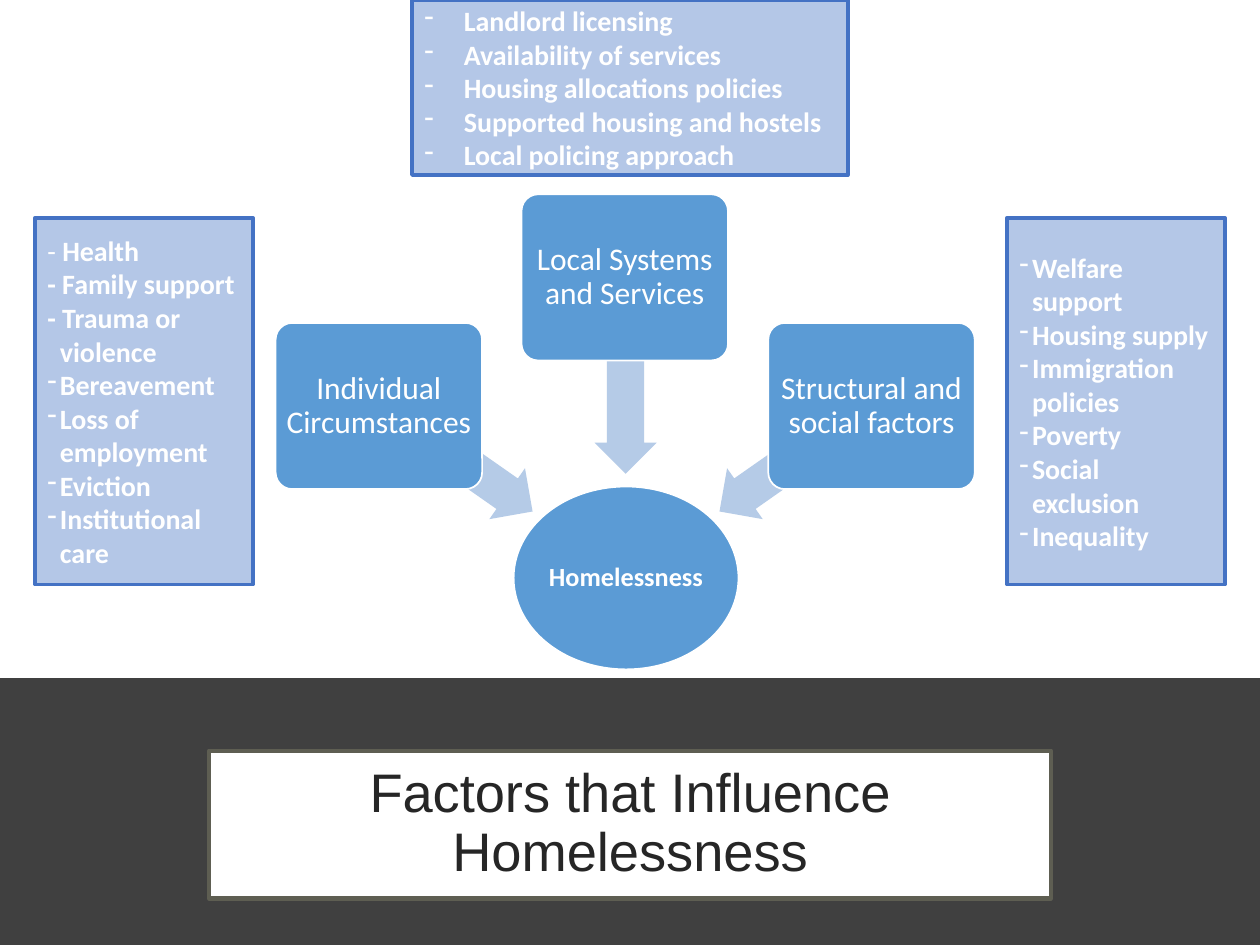
"""Build a slide on the factors that influence homelessness."""
from lxml import etree
from pptx import Presentation
from pptx.dml.color import RGBColor
from pptx.enum.shapes import MSO_SHAPE
from pptx.enum.text import MSO_ANCHOR, MSO_AUTO_SIZE, PP_ALIGN
from pptx.oxml.ns import qn
from pptx.util import Pt

RECT, ROUND = MSO_SHAPE.RECTANGLE, MSO_SHAPE.ROUNDED_RECTANGLE
OVAL, ARROW = MSO_SHAPE.OVAL, MSO_SHAPE.LEFT_ARROW
LEFT, CENTER = PP_ALIGN.LEFT, PP_ALIGN.CENTER
MIDDLE, NO_FIT = MSO_ANCHOR.MIDDLE, MSO_AUTO_SIZE.NONE

WHITE = RGBColor(0xFF, 0xFF, 0xFF)
DARK = RGBColor(0x40, 0x40, 0x40)
INK = RGBColor(0x26, 0x26, 0x26)
OLIVE = RGBColor(0x5E, 0x5E, 0x52)
BLUE = RGBColor(0x5B, 0x9B, 0xD5)
PALE = RGBColor(0xB5, 0xCB, 0xE7)
LIGHT = RGBColor(0xB4, 0xC7, 0xE7)
EDGE = RGBColor(0x44, 0x72, 0xC4)

HEALTH = ["- Health", "- Family support", "- Trauma or violence", "Bereavement",
          "Loss of employment", "Eviction", "Institutional care"]
SOCIAL = ["Welfare support", "Housing supply", "Immigration policies", "Poverty",
          "Social exclusion", "Inequality"]
LOCAL = ["Landlord licensing", "Availability of services",
         "Housing allocations policies", "Supported housing and hostels",
         "Local policing approach"]
NODES = [("Individual Circumstances", 157.5, 184.5),
         ("Local Systems and Services", 298, 111),
         ("Structural and social factors", 439, 184.5)]
ARROWS = [(207.5, 244, 106.5, 215), (301, 196.5, 113, 270), (401.5, 244, 106.5, 325)]


class Deck:
    """Hold the style and the current slide."""

    def __init__(self):
        self.prs = Presentation()
        self.prs.slide_width, self.prs.slide_height = Pt(720), Pt(540)
        self.slide = self.prs.slides.add_slide(self.prs.slide_layouts[5])
        self.font = "Calibri"

    def paint(self, shape, fill, line=None, width=1):
        shape.fill.solid()
        shape.fill.fore_color.rgb = fill
        if line is None:
            shape.line.fill.background()
        else:
            shape.line.color.rgb = line
            shape.line.width = Pt(width)

    def shape(self, kind, box, fill, line=None, width=1):
        shape = self.slide.shapes.add_shape(kind, *map(Pt, box))
        shape.shadow.inherit = False
        self.paint(shape, fill, line, width)
        return shape

    def style(self, run, size, color, bold=False, name=None):
        font = run.font
        font.name, font.size, font.bold = name or self.font, Pt(size), bold
        font.color.rgb = color

    def title(self, text, box):
        shape = self.slide.shapes.title
        shape.left, shape.top, shape.width, shape.height = map(Pt, box)
        self.paint(shape, WHITE, OLIVE, 2.5)
        frame = shape.text_frame
        frame.text = text
        frame.auto_size, frame.vertical_anchor = NO_FIT, MIDDLE
        para = frame.paragraphs[0]
        para.alignment, para.line_spacing = CENTER, 0.9
        self.style(para.runs[0], 31, INK, name="Arial")

    def band(self, box):
        band = self.shape(RECT, box, DARK)
        self.slide.shapes.title.element.addprevious(band.element)

    def node(self, kind, box, text, size, inset, bold=False):
        shape = self.shape(kind, box, BLUE, WHITE)
        if kind == ROUND:
            shape.adjustments[0] = 0.1
        frame = shape.text_frame
        frame.text = text
        frame.word_wrap, frame.vertical_anchor = True, MIDDLE
        frame.margin_left = frame.margin_right = Pt(inset)
        frame.margin_top = frame.margin_bottom = Pt(inset)
        para = frame.paragraphs[0]
        para.alignment, para.line_spacing = CENTER, 0.9
        self.style(para.runs[0], size, WHITE, bold)

    def arrow(self, left, top, width, turn):
        shape = self.shape(ARROW, (left, top, width, 35.5), PALE)
        shape.adjustments[0], shape.adjustments[1] = 0.6, 0.5
        shape.rotation = turn

    def panel(self, box, items, indent):
        frame = self.shape(RECT, box, LIGHT, EDGE, 2.25).text_frame
        frame.text = "\n".join(items)
        frame.word_wrap, frame.vertical_anchor = True, MIDDLE
        for para in frame.paragraphs:
            para.alignment = LEFT
            props = para._p.get_or_add_pPr()
            props.set("marL", str(Pt(indent)))
            props.set("indent", str(-Pt(indent)))
            if not para.text.startswith("-"):
                etree.SubElement(props, qn("a:buChar")).set("char", "-")
            self.style(para.runs[0], 16, WHITE, True)
        first = frame.paragraphs[0]
        if first.text.startswith("- "):
            word = first.add_run()
            word.text = first.runs[0].text[2:]
            first.runs[0].text = "- "
            first.runs[0].font.bold = False
            self.style(word, 16, WHITE, True)


def main():
    deck = Deck()
    deck.band((0, 387.5, 720, 152.5))
    deck.title("Factors that Influence Homelessness", (119.5, 429, 481, 84.5))
    deck.node(OVAL, (293.5, 278, 128.5, 104.5), "Homelessness", 15, 1, True)
    for arrow, (text, left, top) in zip(ARROWS, NODES):
        deck.arrow(*arrow)
        deck.node(ROUND, (left, top, 118, 95), text, 18, 2.5)
    deck.panel((20, 124.5, 124.5, 209.5), HEALTH, 7.2)
    deck.panel((575.5, 124.5, 124.5, 209.5), SOCIAL, 7.2)
    deck.panel((235.5, 0, 249, 100), LOCAL, 22.5)
    deck.prs.save("out.pptx")


if __name__ == "__main__":
    main()
